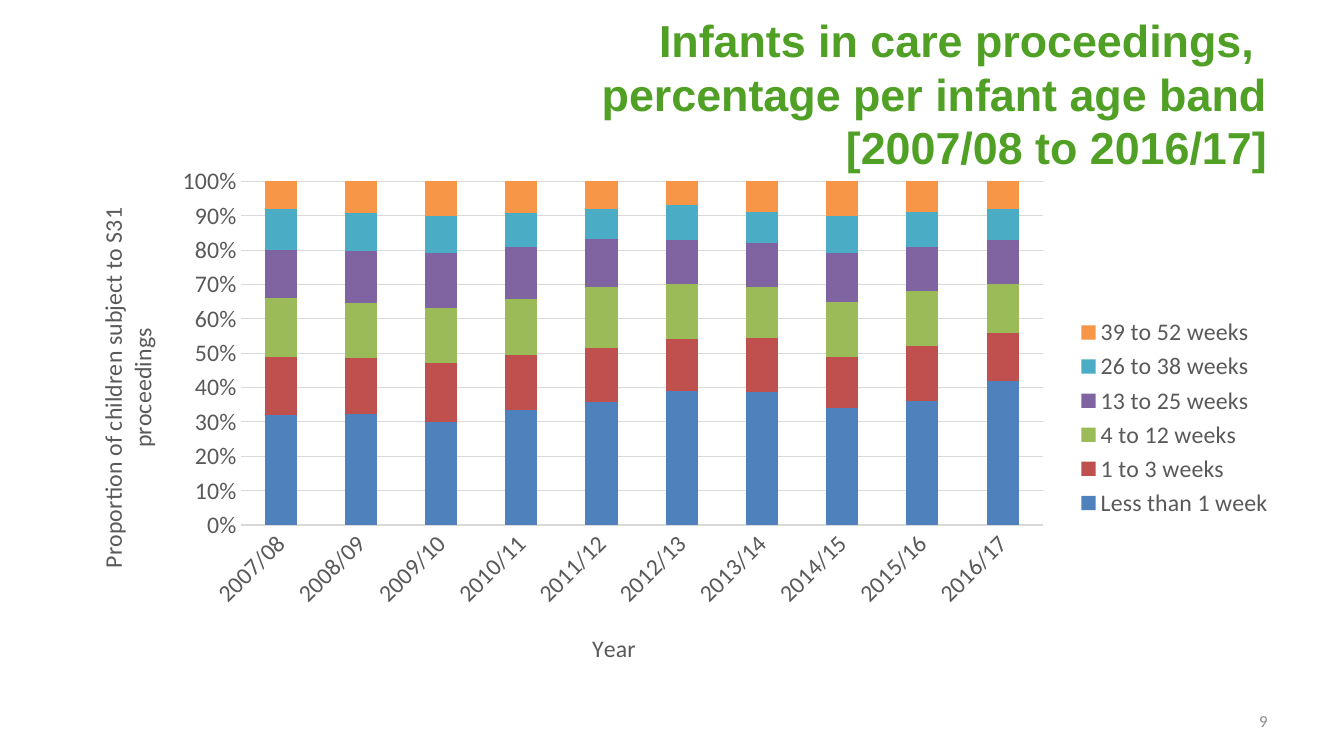
from lxml.etree import SubElement
from pptx import Presentation
from pptx.chart.data import CategoryChartData
from pptx.dml.color import RGBColor
from pptx.enum.chart import XL_CHART_TYPE, XL_LEGEND_POSITION, XL_TICK_MARK
from pptx.enum.text import MSO_ANCHOR, MSO_AUTO_SIZE, PP_ALIGN
from pptx.oxml import parse_xml
from pptx.oxml.ns import nsdecls, qn
from pptx.util import Inches, Pt


def style(font, name, size, color, bold=False):
    font.name, font.size, font.bold = name, Pt(size), bold
    font.color.rgb = RGBColor.from_string(color)


def place(element, index, **fractions):
    """Give a chart part a fixed place, in fractions of the chart."""
    for old in element.findall(qn("c:layout")):
        element.remove(old)
    layout = parse_xml(f"<c:layout {nsdecls('c')}><c:manualLayout/></c:layout>")
    for tag, value in fractions.items():
        SubElement(layout[0], qn(f"c:{tag}")).set("val", str(value))
    element.insert(index, layout)


GREY = "595959"
GRID = RGBColor.from_string("D9D9D9")

prs = Presentation()
prs.slide_width, prs.slide_height = Inches(13.33), Inches(7.5)
slide = prs.slides.add_slide(prs.slide_layouts[5])

# Heading
heading = slide.shapes.title
heading.left, heading.top = Inches(0.67), Inches(0.3)
heading.width, heading.height = Inches(12), Inches(1.25)
heading_text = heading.text_frame
heading_text.word_wrap = True
heading_text.auto_size = MSO_AUTO_SIZE.NONE
heading_text.vertical_anchor = MSO_ANCHOR.MIDDLE
heading_line = heading_text.paragraphs[0]
heading_line.alignment = PP_ALIGN.RIGHT
for i, words in enumerate(["Infants in care proceedings, ",
                           "percentage per infant age band",
                           "[2007/08 to 2016/17]"]):
    if i:
        heading_line.add_line_break()
    run = heading_line.add_run()
    run.text = words
    style(run.font, "Arial", 32, "51A026", True)

# Age bands by year
age_bands = [
    ("Less than 1 week", "4F81BD", [32, 32, 30, 33, 36, 39, 39, 34, 36, 42]),
    ("1 to 3 weeks", "C0504D", [17, 16, 17, 16, 16, 15, 16, 15, 16, 14]),
    ("4 to 12 weeks", "9BBB59", [17, 16, 16, 16, 18, 16, 15, 16, 16, 14]),
    ("13 to 25 weeks", "8064A2", [14, 15, 16, 15, 14, 13, 13, 14, 13, 13]),
    ("26 to 38 weeks", "4BACC6", [12, 11, 11, 10, 9, 10, 9, 11, 10, 9]),
    ("39 to 52 weeks", "F79646", [8, 9, 10, 9, 8, 7, 9, 10, 9, 8]),
]
proportions = CategoryChartData()
proportions.categories = [f"{year}/{(year + 1) % 100:02}" for year in range(2007, 2017)]
for band, _, values in age_bands:
    proportions.add_series(band, values)
chart = slide.shapes.add_chart(
    XL_CHART_TYPE.COLUMN_STACKED_100, Inches(0.67), Inches(1.55),
    Inches(12), Inches(5.19), proportions).chart
chart.has_title = False
style(chart.font, "Calibri", 17, GREY)
plot = chart.plots[0]
plot.gap_width, plot.overlap, plot.vary_by_categories = 150, 100, False
for series, (_, color, _) in zip(plot.series, age_bands):
    series.format.fill.solid()
    series.format.fill.fore_color.rgb = RGBColor.from_string(color)

# Axes, with turned year labels and a turned proportion title
years, shares = chart.category_axis, chart.value_axis
for axis, words, label_turn, title_turn, x, y in [
        (years, "Year", -45, 0, 0.43, 0.9),
        (shares, "Proportion of children subject to S31 proceedings", 0, -90, 0.02, 0.09)]:
    axis.major_tick_mark = axis.minor_tick_mark = XL_TICK_MARK.NONE
    style(axis.tick_labels.font, "Calibri", 17, GREY)
    label_body = axis._element.find(qn("c:txPr")).find(qn("a:bodyPr"))
    label_body.set("rot", str(label_turn * 60000))
    title_frame = axis.axis_title.text_frame
    title_frame.paragraphs[0].alignment = PP_ALIGN.CENTER
    run = title_frame.paragraphs[0].add_run()
    run.text = words
    style(run.font, "Calibri", 17, GREY)
    title_frame._txBody.bodyPr.set("rot", str(title_turn * 60000))
    place(axis.axis_title._element, 1, xMode="edge", yMode="edge", x=x, y=y)
years.format.line.color.rgb = GRID
years.format.line.width = Pt(0.75)
shares.format.line.fill.background()
shares.has_major_gridlines = True
shares.major_gridlines.format.line.color.rgb = GRID
shares.major_gridlines.format.line.width = Pt(0.75)
shares.minimum_scale, shares.maximum_scale, shares.major_unit = 0, 1, 0.1
shares.tick_labels.number_format = "0%"
shares.tick_labels.number_format_is_linked = False

# Legend and plot area
chart.has_legend = True
legend = chart.legend
legend.position = XL_LEGEND_POSITION.RIGHT
legend.include_in_layout = False
style(legend.font, "Calibri", 17, GREY)
place(legend._element, 1, xMode="edge", yMode="edge", x=0.83, y=0.3, w=0.17, h=0.4)
place(plot._element.getparent(), 0, layoutTarget="inner", xMode="edge", yMode="edge",
      x=0.143, y=0.048, w=0.663, h=0.657)

# Slide number
number_text = slide.shapes.add_textbox(
    Inches(9.56), Inches(6.95), Inches(3.11), Inches(0.4)).text_frame
number_text.word_wrap = True
number_text.vertical_anchor = MSO_ANCHOR.MIDDLE
number_text.paragraphs[0].alignment = PP_ALIGN.RIGHT
run = number_text.paragraphs[0].add_run()
run.text = "9"
style(run.font, "Calibri", 12, "8C8C8C")

prs.save("out.pptx")
